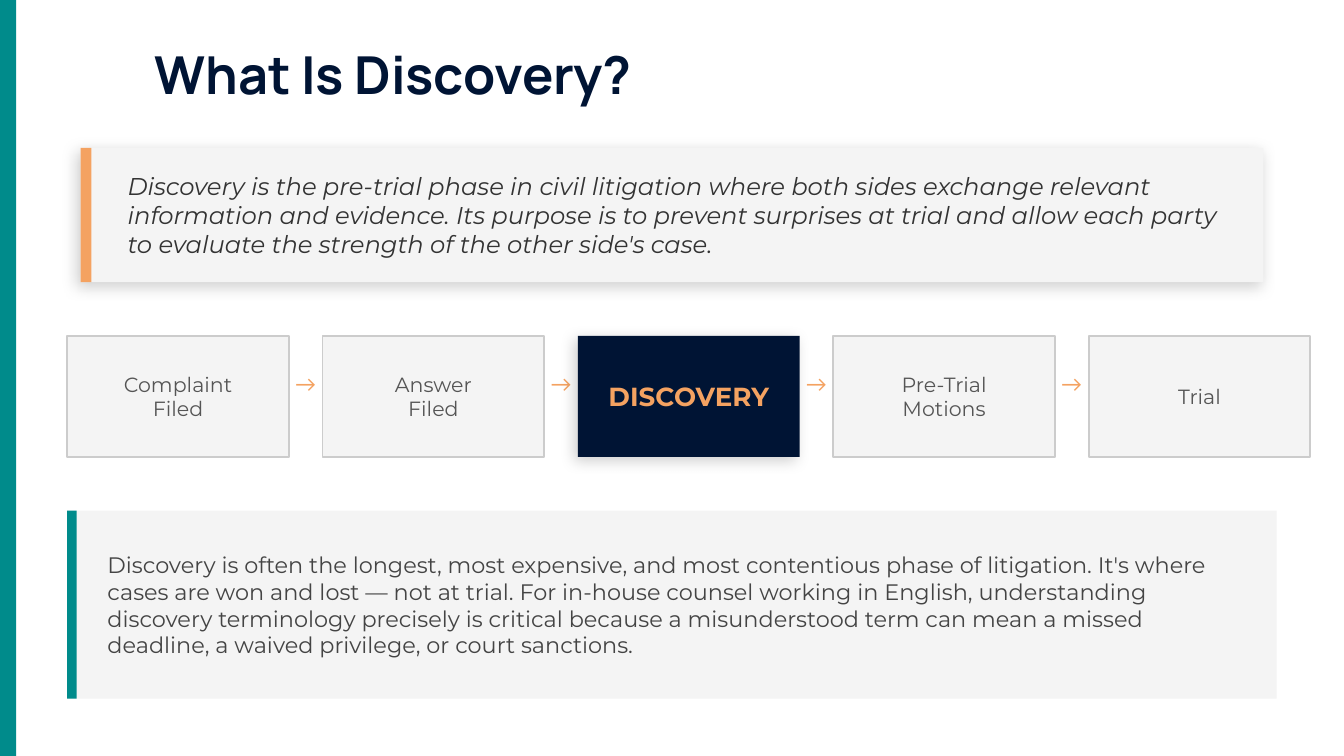
"""Build the slide that explains what discovery is."""
import lxml.etree
import pptx
import pptx.dml.color
import pptx.enum.shapes
import pptx.enum.text
import pptx.oxml.ns
import pptx.util
from pptx.util import Inches

RGBColor = pptx.dml.color.RGBColor
Align = pptx.enum.text.PP_ALIGN

TEAL = RGBColor(0x00, 0x8B, 0x8B)
NAVY = RGBColor(0x00, 0x14, 0x34)
ORANGE = RGBColor(0xF4, 0xA2, 0x61)
PANEL = RGBColor(0xF4, 0xF4, 0xF4)
BORDER = RGBColor(0xCC, 0xCC, 0xCC)
QUOTE_GRAY = RGBColor(0x33, 0x33, 0x33)
BODY_GRAY = RGBColor(0x44, 0x44, 0x44)
STEP_GRAY = RGBColor(0x55, 0x55, 0x55)

HEADING_FONT = "Manrope"
BODY_FONT = "Montserrat"

SLIDE_WIDTH = 10
SLIDE_HEIGHT = SLIDE_WIDTH * 9 / 16

STEPS = [["Complaint", "Filed"], ["Answer", "Filed"], ["DISCOVERY"],
         ["Pre-Trial", "Motions"], ["Trial"]]
CURRENT_STEP = 2
STEP_LEFT, STEP_TOP, STEP_WIDTH, STEP_HEIGHT, STEP_GAP = 0.5, 2.5, 1.65, 0.9, 0.25

DEFINITION = (
    "Discovery is the pre-trial phase in civil litigation where both sides "
    "exchange relevant information and evidence. Its purpose is to prevent "
    "surprises at trial and allow each party to evaluate the strength of the "
    "other side's case."
)
IMPORTANCE = (
    "Discovery is often the longest, most expensive, and most contentious phase "
    "of litigation. It's where cases are won and lost — not at trial. For "
    "in-house counsel working in English, understanding discovery terminology "
    "precisely is critical because a misunderstood term can mean a missed "
    "deadline, a waived privilege, or court sanctions."
)


def add_shadow(shape):
    """Give a shape a soft outer shadow."""
    qn = pptx.oxml.ns.qn
    effects = shape._element.spPr.find(qn("a:effectLst"))
    shadow = lxml.etree.SubElement(
        effects, qn("a:outerShdw"), blurRad=str(pptx.util.Pt(8)),
        dist=str(pptx.util.Pt(3)), dir=str(135 * 60000),
        algn="bl", rotWithShape="0")
    color = lxml.etree.SubElement(shadow, qn("a:srgbClr"), val="000000")
    lxml.etree.SubElement(color, qn("a:alpha"), val="18000")


def add_box(slide, left, top, width, height, fill, border=None, shadow=False):
    """Add a filled rectangle, optionally with a border or a shadow."""
    shape = slide.shapes.add_shape(
        pptx.enum.shapes.MSO_SHAPE.RECTANGLE,
        Inches(left), Inches(top), Inches(width), Inches(height))
    shape.shadow.inherit = False
    shape.fill.solid()
    shape.fill.fore_color.rgb = fill
    if border is None:
        shape.line.fill.background()
    else:
        shape.line.color.rgb = border
        shape.line.width = pptx.util.Pt(1)
    if shadow:
        add_shadow(shape)


def add_text(slide, left, top, width, height, lines, size, color,
             font=BODY_FONT, align=Align.LEFT, bold=False, italic=False):
    """Add a text box with one vertically centred paragraph for each line."""
    text_box = slide.shapes.add_textbox(
        Inches(left), Inches(top), Inches(width), Inches(height))
    frame = text_box.text_frame
    frame.word_wrap = True
    frame.vertical_anchor = pptx.enum.text.MSO_ANCHOR.MIDDLE
    frame.margin_left = frame.margin_right = 0
    frame.margin_top = frame.margin_bottom = 0
    for index, line in enumerate(lines):
        paragraph = frame.add_paragraph() if index else frame.paragraphs[0]
        paragraph.alignment = align
        run = paragraph.add_run()
        run.text = line
        run.font.name = font
        run.font.size = pptx.util.Pt(size)
        run.font.color.rgb = color
        run.font.bold = bold
        run.font.italic = italic


def add_panel(slide, left, top, width, height, accent, accent_width, shadow=False):
    """Add a light panel with an accent bar on its left edge."""
    add_box(slide, left, top, width, height, PANEL, shadow=shadow)
    add_box(slide, left, top, accent_width, height, accent)


def add_timeline(slide):
    """Add the litigation steps with arrows between them."""
    for index, lines in enumerate(STEPS):
        left = STEP_LEFT + index * (STEP_WIDTH + STEP_GAP)
        place = (left, STEP_TOP, STEP_WIDTH, STEP_HEIGHT)
        if index == CURRENT_STEP:
            add_box(slide, *place, NAVY, shadow=True)
            add_text(slide, *place, lines, 14, ORANGE, align=Align.CENTER, bold=True)
        else:
            add_box(slide, *place, PANEL, border=BORDER)
            add_text(slide, *place, lines, 11, STEP_GRAY, align=Align.CENTER)
        if index < len(STEPS) - 1:
            add_text(slide, left + STEP_WIDTH, STEP_TOP + 0.15, STEP_GAP, 0.4,
                     ["→"], 14, ORANGE, font=HEADING_FONT, align=Align.CENTER)


def main():
    """Build the slide and save it."""
    presentation = pptx.Presentation()
    presentation.slide_width = Inches(SLIDE_WIDTH)
    presentation.slide_height = Inches(SLIDE_HEIGHT)
    slide = presentation.slides.add_slide(presentation.slide_layouts[6])

    add_box(slide, 0, 0, 0.12, SLIDE_HEIGHT, TEAL)
    add_text(slide, 1.15, 0.3, 6, 0.5, ["What Is Discovery?"], 28, NAVY,
             font=HEADING_FONT, bold=True)
    add_panel(slide, 0.6, 1.1, 8.8, 1, ORANGE, 0.08, shadow=True)
    add_text(slide, 0.95, 1.1, 8.2, 1, [DEFINITION], 13, QUOTE_GRAY, italic=True)
    add_timeline(slide)
    add_panel(slide, 0.5, 3.8, 9, 1.4, TEAL, 0.07)
    add_text(slide, 0.8, 3.8, 8.5, 1.4, [IMPORTANCE], 12, BODY_GRAY)

    presentation.save("out.pptx")


if __name__ == "__main__":
    main()
